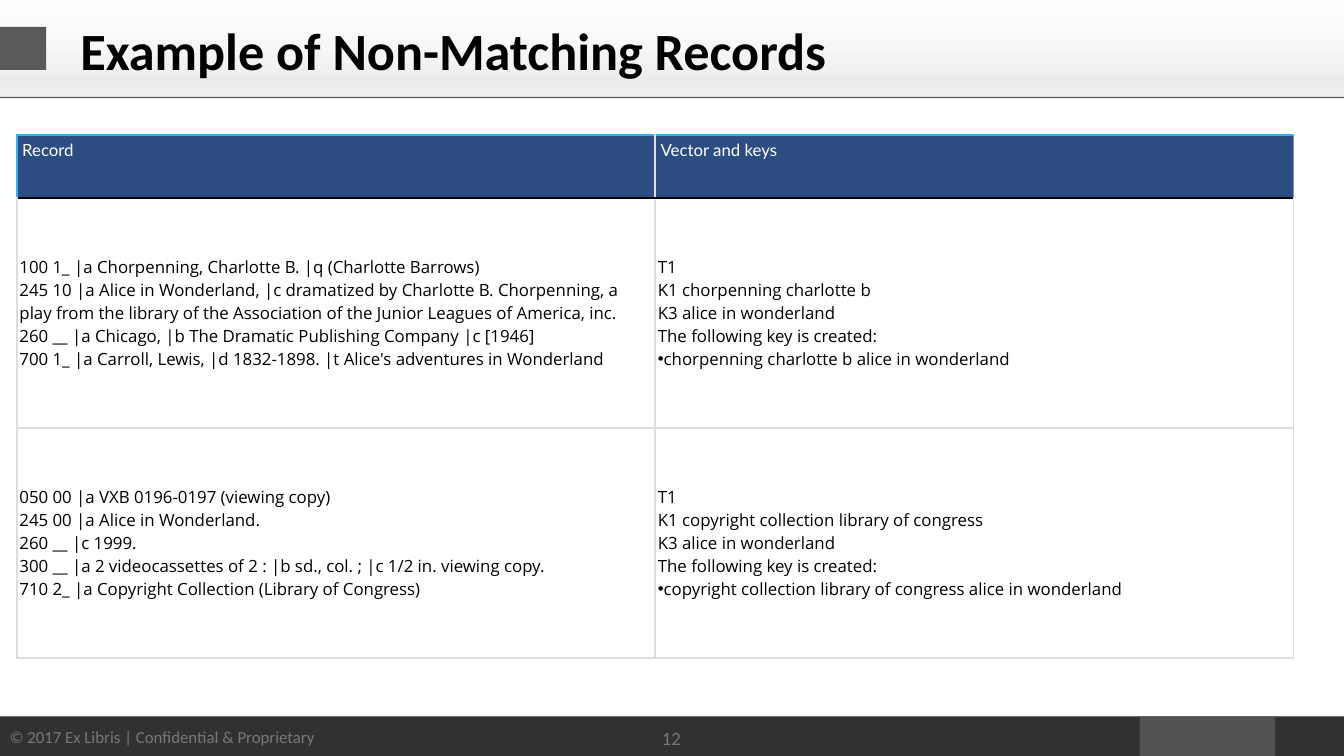
import pptx
import pptx.util
import pptx.dml.color
import pptx.enum.shapes
import pptx.enum.text
import pptx.oxml
import pptx.oxml.ns
import lxml.etree

COLS, ROWS = 100, 56.25
UNIT = 0.1
ALIGN = pptx.enum.text.PP_ALIGN
MID = pptx.enum.text.MSO_ANCHOR.MIDDLE
TOP = pptx.enum.text.MSO_ANCHOR.TOP
GREY = "787878"
RULE = "DDDDDD"
BLUE = "30B3F6"


def color(code):
    return pptx.dml.color.RGBColor.from_string(code)


def size(units):
    return pptx.util.Inches(units * UNIT)


def node(parent, tag, **attrs):
    """Append a DrawingML element to parent."""
    item = lxml.etree.SubElement(parent, pptx.oxml.ns.qn("a:" + tag))
    for key, value in attrs.items():
        item.set(key, str(value))
    return item


class Deck:
    """Holds the style and the current slide; lengths are grid units."""

    def __init__(self):
        self.show = pptx.Presentation()
        self.show.slide_width = size(COLS)
        self.show.slide_height = size(ROWS)
        self.slide = self.show.slides.add_slide(self.show.slide_layouts[6])

    def box(self, x, y, wide, high, fill):
        """Draw a bar; fill is a hex string or (place, hex, opacity) stops."""
        kind = pptx.enum.shapes.MSO_SHAPE.RECTANGLE
        bar = self.slide.shapes.add_shape(kind, *map(size, (x, y, wide, high)))
        bar.shadow.inherit = False
        bar.line.fill.background()
        if isinstance(fill, str):
            bar.fill.solid()
            bar.fill.fore_color.rgb = color(fill)
            return
        bar.fill.gradient()
        bar.fill.gradient_angle = 270
        stops = bar.fill._fill._gradFill.find(pptx.oxml.ns.qn("a:gsLst"))
        stops.clear()
        for place, code, solid in fill:
            stop = node(stops, "gs", pos=place * 1000)
            node(node(stop, "srgbClr", val=code), "alpha", val=solid * 1000)

    def style(self, para, points, face, code, bold=False):
        para.font.size = pptx.util.Pt(points)
        para.font.name = face
        para.font.bold = bold
        para.font.color.rgb = color(code)

    def text(self, x, y, wide, high, words, points, code, bold=False,
             align=ALIGN.CENTER, anchor=MID, wrap=True):
        label = self.slide.shapes.add_textbox(*map(size, (x, y, wide, high)))
        frame = label.text_frame
        frame.word_wrap = wrap
        frame.vertical_anchor = anchor
        para = frame.paragraphs[0]
        para.text = words
        para.alignment = align
        self.style(para, points, "Calibri", code, bold)

    def cell(self, cell, lines, face, code, fill, inset, anchor, edges):
        """Fill a cell; edges are the left, right, top and bottom colours."""
        cell.margin_left = cell.margin_right = size(inset)
        cell.margin_top = cell.margin_bottom = size(inset)
        cell.vertical_anchor = anchor
        props = cell._tc.get_or_add_tcPr()
        for side, edge in zip("LRTB", edges):
            line = node(props, "ln" + side, w=12700)
            node(node(line, "solidFill"), "srgbClr", val=edge)
        cell.fill.solid()
        cell.fill.fore_color.rgb = color(fill)
        cell.text = "\n".join(line.lstrip("•") for line in lines)
        for para, line in zip(cell.text_frame.paragraphs, lines):
            if line.startswith("•"):
                props = para._p.get_or_add_pPr()
                node(props, "buFont", typeface="Arial")
                node(props, "buChar", char="•")
            self.style(para, 9, face, code)

    def table(self, x, y, wide, highs, head, body):
        count = len(head)
        frame = self.slide.shapes.add_table(
            len(highs), count, *map(size, (x, y, wide, sum(highs))))
        grid = frame.table
        grid.horz_banding = False
        for col in grid.columns:
            col.width = size(wide / count)
        for row, high in zip(grid.rows, highs):
            row.height = size(high)
        for c, name in enumerate(head):
            left = BLUE if c == 0 else RULE
            right = BLUE if c == count - 1 else RULE
            self.cell(grid.cell(0, c), [name], "Lato", "FFFFFF", "2C4D82",
                      0.4, TOP, [left, right, BLUE, "000000"])
        for r, record in enumerate(body, 1):
            top = "000000" if r == 1 else RULE
            for c, lines in enumerate(record):
                self.cell(grid.cell(r, c), lines, "Open Sans", "000000",
                          "FFFFFF", 0.2, MID, [RULE, RULE, top, RULE])


def keys(author):
    """Vector and key lines for a record of Alice in Wonderland."""
    title = "alice in wonderland"
    return ["T1", f"K1 {author}", f"K3 {title}",
            "The following key is created:", f"•{author} {title}"]


BODY = [
    [["100 1_ |a Chorpenning, Charlotte B. |q (Charlotte Barrows)",
      "245 10 |a Alice in Wonderland, |c dramatized by Charlotte B. "
      "Chorpenning, a play from the library of the Association of the "
      "Junior Leagues of America, inc.",
      "260 __ |a Chicago, |b The Dramatic Publishing Company |c [1946]",
      "700 1_ |a Carroll, Lewis, |d 1832-1898. "
      "|t Alice's adventures in Wonderland"],
     keys("chorpenning charlotte b")],
    [["050 00 |a VXB 0196-0197 (viewing copy)",
      "245 00 |a Alice in Wonderland.",
      "260 __ |c 1999.",
      "300 __ |a 2 videocassettes of 2 : |b sd., col. ; "
      "|c 1/2 in. viewing copy.",
      "710 2_ |a Copyright Collection (Library of Congress)"],
     keys("copyright collection library of congress")],
]


def main():
    deck = Deck()
    foot, deep = 53.3, 3.2
    deck.box(0, foot, COLS, deep, "313133")
    deck.text(-0.4, 53.6, 24.9, 2.5,
              "© 2017 Ex Libris | Confidential & Proprietary",
              9, GREY, anchor=TOP, wrap=False)
    deck.box(84.8, foot, 10.1, deep, "525254")
    deck.box(0, 0, COLS, 7.2, [(0, "FAFAFA", 12), (66, "D7D7D7", 30),
                               (83, "D7D7D7", 47), (100, "E4E4E4", 54)])
    deck.box(0, 2, 3.45, deep, "595959")
    deck.box(0, 7.2, COLS, 0.1, "595959")
    deck.text(47, 52.95, 5.9, 4, "12", 10, GREY)
    deck.text(5, 0.55, 90, 6.3, "Example of Non-Matching Records", 28,
              "000000", bold=True, align=ALIGN.LEFT)
    deck.table(1.25, 10.05, 95, [4.7, 17.1, 17.1],
               ["Record", "Vector and keys"], BODY)
    deck.show.save("out.pptx")


if __name__ == "__main__":
    main()
